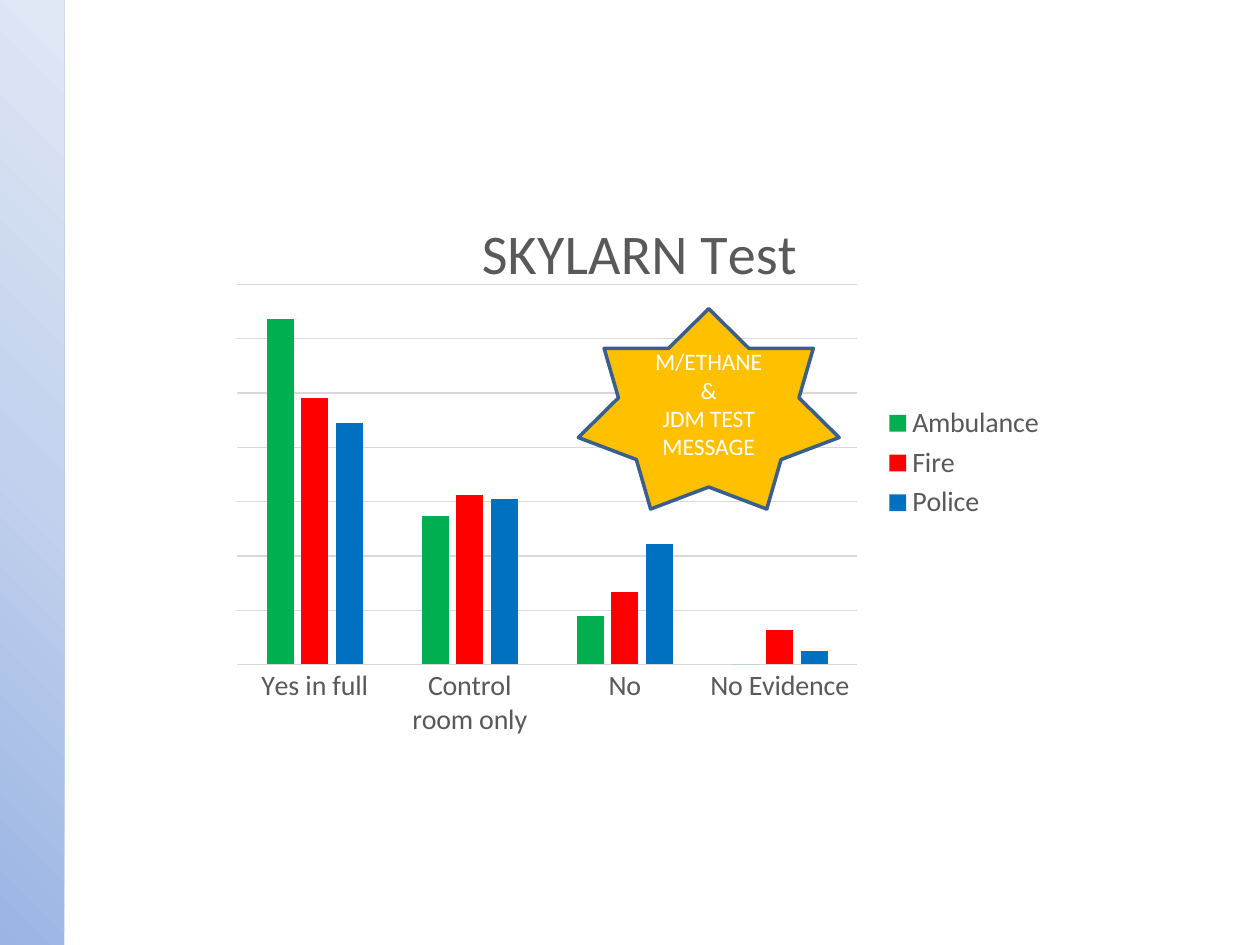
import copy

import pptx
import pptx.chart.data
import pptx.dml.color
import pptx.enum.chart
import pptx.enum.shapes
import pptx.enum.text
import pptx.oxml
import pptx.oxml.ns
import pptx.util
from pptx.util import Inches

RGB = pptx.dml.color.RGBColor
BAND_COLORS = (RGB(0x9A, 0xB5, 0xE4), RGB(0xC2, 0xD1, 0xED), RGB(0xE1, 0xE8, 0xF5))
GREY_TEXT = RGB(0x59, 0x59, 0x59)
GRID_GREY = RGB(0xD9, 0xD9, 0xD9)
GOLD = RGB(0xFF, 0xC0, 0x00)
STAR_EDGE = RGB(0x3A, 0x5F, 0x8C)
WHITE = RGB(0xFF, 0xFF, 0xFF)
FONT = "Calibri"

ANSWERS = ("Yes in full", "Control room only", "No", "No Evidence")
SERVICES = (
    ("Ambulance", (100, 43, 14, 0), RGB(0x00, 0xB0, 0x50)),
    ("Fire", (77, 49, 21, 10), RGB(0xFF, 0x00, 0x00)),
    ("Police", (70, 48, 35, 4), RGB(0x00, 0x70, 0xC0)),
)
AXIS_TOP = 110
GRID_STEPS = 7


def style_font(font, size, color):
    """Give a font the slide's typeface with a size and colour."""
    font.name = FONT
    font.size = pptx.util.Pt(size)
    font.bold = False
    font.color.rgb = color


def style_line(line, color, width):
    """Set the colour and the width in points of a line."""
    line.color.rgb = color
    line.width = pptx.util.Pt(width)


def chart_layout(target, **fractions):
    """Return a manual chart layout with the given fractions of the chart."""
    inner = '<c:layoutTarget val="inner"/>' if target == "inner" else ""
    modes = "".join(f'<c:{key}Mode val="edge"/>' for key in ("x", "y"))
    values = "".join(f'<c:{key} val="{value}"/>' for key, value in fractions.items())
    return pptx.oxml.parse_xml(
        f'<c:layout {pptx.oxml.ns.nsdecls("c")}><c:manualLayout>'
        f"{inner}{modes}{values}</c:manualLayout></c:layout>"
    )


def set_layout(parent, layout, after=None):
    """Replace the layout of a chart part, placing it after a sibling if given."""
    for old in parent.findall(pptx.oxml.ns.qn("c:layout")):
        parent.remove(old)
    if after is None:
        parent.insert(0, layout)
    else:
        after.addnext(layout)


def add_side_band(slide, left, top, width, height):
    """Draw the gradient band along the slide's edge."""
    band = slide.shapes.add_shape(
        pptx.enum.shapes.MSO_SHAPE.RECTANGLE, left, top, width, height
    )
    band.shadow.inherit = False
    band.line.fill.background()
    band.fill.gradient()
    band.fill.gradient_angle = 45
    stop_list = band._element.spPr.find(".//" + pptx.oxml.ns.qn("a:gsLst"))
    stop_list.insert(1, copy.deepcopy(stop_list[0]))
    for stop, position, color in zip(band.fill.gradient_stops, (0, 0.5, 1), BAND_COLORS):
        stop.position = position
        stop.color.rgb = color


def add_test_chart(slide, left, top, width, height):
    """Chart the test answers of each emergency service."""
    data = pptx.chart.data.CategoryChartData(number_format="General")
    data.categories = ANSWERS
    for service, values, _ in SERVICES:
        data.add_series(service, values)
    chart = slide.shapes.add_chart(
        pptx.enum.chart.XL_CHART_TYPE.COLUMN_CLUSTERED, left, top, width, height, data
    ).chart
    style_font(chart.font, 10, RGB(0, 0, 0))

    chart.has_title = True
    heading = chart.chart_title.text_frame
    heading.text = "SKYLARN Test"
    style_font(heading.paragraphs[0].font, 32, GREY_TEXT)
    title = chart.chart_title._element
    set_layout(title, chart_layout("outer", x=0.3, y=0.05),
               title.find(pptx.oxml.ns.qn("c:tx")))

    plot = chart.plots[0]
    plot.gap_width = 219
    plot.overlap = -27
    plot.vary_by_categories = False
    for series, (_, _, color) in zip(plot.series, SERVICES):
        series.format.fill.solid()
        series.format.fill.fore_color.rgb = color
    set_layout(plot._element.getparent(),
               chart_layout("inner", x=0.02, y=0.19, w=0.74, h=0.66))

    answers_axis = chart.category_axis
    answers_axis.major_tick_mark = pptx.enum.chart.XL_TICK_MARK.NONE
    style_font(answers_axis.tick_labels.font, 16, GREY_TEXT)
    style_line(answers_axis.format.line, GRID_GREY, 0.75)

    share_axis = chart.value_axis
    share_axis.minimum_scale = 0
    share_axis.maximum_scale = AXIS_TOP
    share_axis.major_unit = AXIS_TOP / GRID_STEPS
    share_axis.has_major_gridlines = True
    style_line(share_axis.major_gridlines.format.line, GRID_GREY, 0.75)
    share_axis.visible = False

    chart.has_legend = True
    chart.legend.position = pptx.enum.chart.XL_LEGEND_POSITION.RIGHT
    chart.legend.include_in_layout = False
    style_font(chart.legend.font, 16, GREY_TEXT)


def add_message_star(slide, left, top, width, height):
    """Draw the star that names the test message."""
    star = slide.shapes.add_shape(
        pptx.enum.shapes.MSO_SHAPE.STAR_7_POINT, left, top, width, height
    )
    star.shadow.inherit = False
    star.fill.solid()
    star.fill.fore_color.rgb = GOLD
    style_line(star.line, STAR_EDGE, 2)
    message = star.text_frame
    message.word_wrap = True
    message.vertical_anchor = pptx.enum.text.MSO_ANCHOR.MIDDLE
    message.text = "M/ETHANE\n&\nJDM TEST MESSAGE"
    for paragraph in message.paragraphs:
        paragraph.alignment = pptx.enum.text.PP_ALIGN.CENTER
        style_font(paragraph.font, 13.5, WHITE)


def main():
    """Build the slide and save it."""
    deck = pptx.Presentation()
    deck.slide_width = Inches(10)
    deck.slide_height = Inches(7.5)
    slide = deck.slides.add_slide(deck.slide_layouts[6])
    add_side_band(slide, 0, 0, Inches(0.51), deck.slide_height)
    add_test_chart(slide, Inches(1.75), Inches(1.39), Inches(6.65), Inches(4.57))
    add_message_star(slide, Inches(4.59), Inches(2.45), Inches(2.07), Inches(1.59))
    deck.save("out.pptx")


if __name__ == "__main__":
    main()
